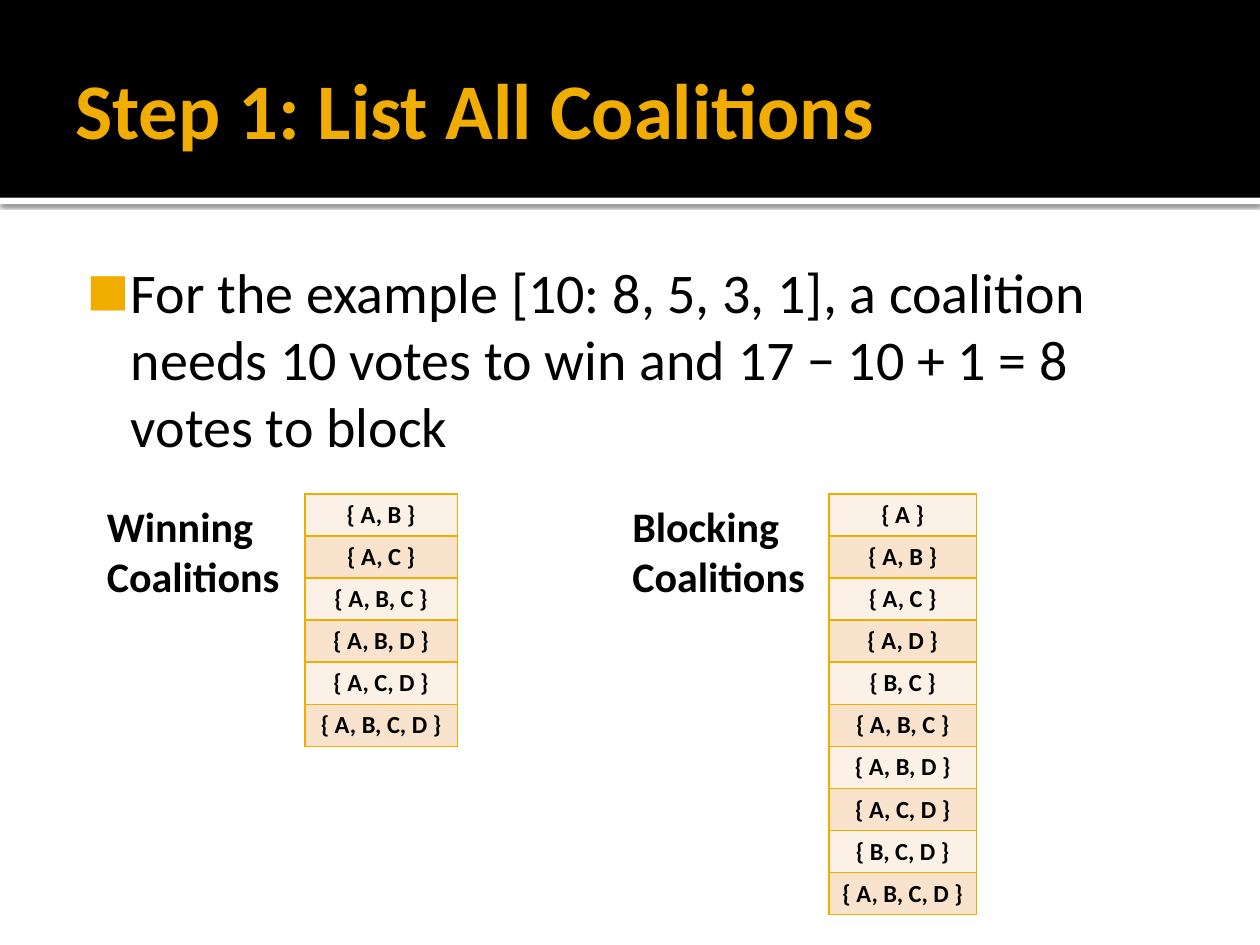
import pptx
import pptx.dml.color
import pptx.enum.shapes
import pptx.enum.text
import pptx.oxml
import pptx.oxml.ns
import pptx.util
from pptx.util import Inches

GOLD, BLACK, WHITE = "F0AD00", "000000", "FFFFFF"
ROW_FILLS = ("FCF1E7", "F9E3CC")
ROW_HEIGHT = 1 / 3
LISTS_TOP = 3.92
WINNING = ["A, B", "A, C", "A, B, C", "A, B, D", "A, C, D", "A, B, C, D"]
BLOCKING = ["A", "A, B", "A, C", "A, D", "B, C",
            "A, B, C", "A, B, D", "A, C, D", "B, C, D", "A, B, C, D"]


def color(value):
    return pptx.dml.color.RGBColor.from_string(value)


def add_xml(parent, xml):
    """Append a DrawingML fragment to parent."""
    namespace = pptx.oxml.ns.nsdecls("a")
    element = pptx.oxml.parse_xml(f"<a:root {namespace}>{xml}</a:root>")[0]
    parent.append(element)


def write(para, text, size, fill=BLACK, bold=False, align=None):
    para.alignment = align
    span = para.add_run()
    span.text = text
    span.font.name = "Calibri"
    span.font.size = pptx.util.Pt(size)
    span.font.bold = bold
    span.font.color.rgb = color(fill)


def add_text(page, text, left, top, width, height,
             insets=(0.1, 0.05, 0.1, 0.05), anchor="TOP", **text_format):
    box = page.shapes.add_textbox(Inches(left), Inches(top), Inches(width), Inches(height))
    frame = box.text_frame
    frame.word_wrap = True
    frame.vertical_anchor = pptx.enum.text.MSO_ANCHOR[anchor]
    (frame.margin_left, frame.margin_top,
     frame.margin_right, frame.margin_bottom) = map(Inches, insets)
    para = frame.paragraphs[0]
    write(para, text, **text_format)
    return para


def add_bullet(para, indent, hanging):
    properties = para._p.get_or_add_pPr()
    properties.set("marL", str(Inches(indent)))
    properties.set("indent", str(-Inches(hanging)))
    add_xml(properties, f'<a:buClr><a:srgbClr val="{GOLD}"/></a:buClr>')
    add_xml(properties, '<a:buSzPct val="80000"/>')
    add_xml(properties, '<a:buFont typeface="Calibri"/>')
    add_xml(properties, '<a:buChar char="■"/>')


def add_band(page, top, height, fill):
    """Add a full-width bar without outline or shadow."""
    band = page.shapes.add_shape(pptx.enum.shapes.MSO_SHAPE.RECTANGLE,
                                 0, Inches(top), Inches(10), Inches(height))
    band.shadow.inherit = False
    band.fill.solid()
    band.fill.fore_color.rgb = color(fill)
    band.line.fill.background()
    return band


def add_drop_shadow(shape):
    effects = shape._element.spPr.find(pptx.oxml.ns.qn("a:effectLst"))
    blur, distance = pptx.util.Pt(2.5), pptx.util.Pt(0.8)
    add_xml(effects, f'<a:outerShdw blurRad="{blur}" dist="{distance}" dir="5400000" '
                     'algn="tl" rotWithShape="0"><a:srgbClr val="000000">'
                     '<a:alpha val="60000"/></a:srgbClr></a:outerShdw>')


def style_cell(cell, fill):
    cell.margin_left = cell.margin_right = Inches(0.05)
    properties = cell._tc.get_or_add_tcPr()
    for side in ("lnL", "lnR", "lnT", "lnB"):
        add_xml(properties, f'<a:{side} w="{pptx.util.Pt(1)}"><a:solidFill>'
                            f'<a:srgbClr val="{GOLD}"/></a:solidFill></a:{side}>')
    cell.fill.solid()
    cell.fill.fore_color.rgb = color(fill)


def add_coalitions(page, heading, coalitions, left, table_left, table_width):
    """Add a heading with a one-column table of coalitions to its right."""
    add_text(page, heading, left, LISTS_TOP, 1.83, 0.91, size=24, bold=True)
    count = len(coalitions)
    table = page.shapes.add_table(count, 1, Inches(table_left), Inches(LISTS_TOP),
                                  Inches(table_width), Inches(ROW_HEIGHT * count)).table
    table.first_row = False
    for index, members in enumerate(coalitions):
        cell = table.cell(index, 0)
        style_cell(cell, ROW_FILLS[index % 2])
        write(cell.text_frame.paragraphs[0], f"{{ {members} }}", 14, bold=True,
              align=pptx.enum.text.PP_ALIGN.CENTER)


def main():
    deck = pptx.Presentation()
    deck.slide_width, deck.slide_height = Inches(10), Inches(7.5)
    page = deck.slides.add_slide(deck.slide_layouts[6])

    add_drop_shadow(add_band(page, 1.57, 0.05, WHITE))
    add_band(page, 0, 1.57, BLACK)
    add_text(page, "Step 1: List All Coalitions", 0.5, 0.17, 9, 1.37,
             insets=(0.1, 0.05, 0.05, 0.05), anchor="MIDDLE",
             size=45, fill=GOLD, bold=True)
    example = add_text(page, "For the example [10: 8, 5, 3, 1], a coalition needs 10 votes "
                       "to win and 17 − 10 + 1 = 8 votes to block",
                       0.5, 1.94, 9, 5.06, insets=(0.06, 0.1, 0.1, 0.05), size=32)
    add_bullet(example, indent=0.48, hanging=0.35)

    add_coalitions(page, "Blocking Coalitions", BLOCKING, 4.92, 6.58, 1.17)
    add_coalitions(page, "Winning Coalitions", WINNING, 0.75, 2.42, 1.21)
    deck.save("out.pptx")


if __name__ == "__main__":
    main()
